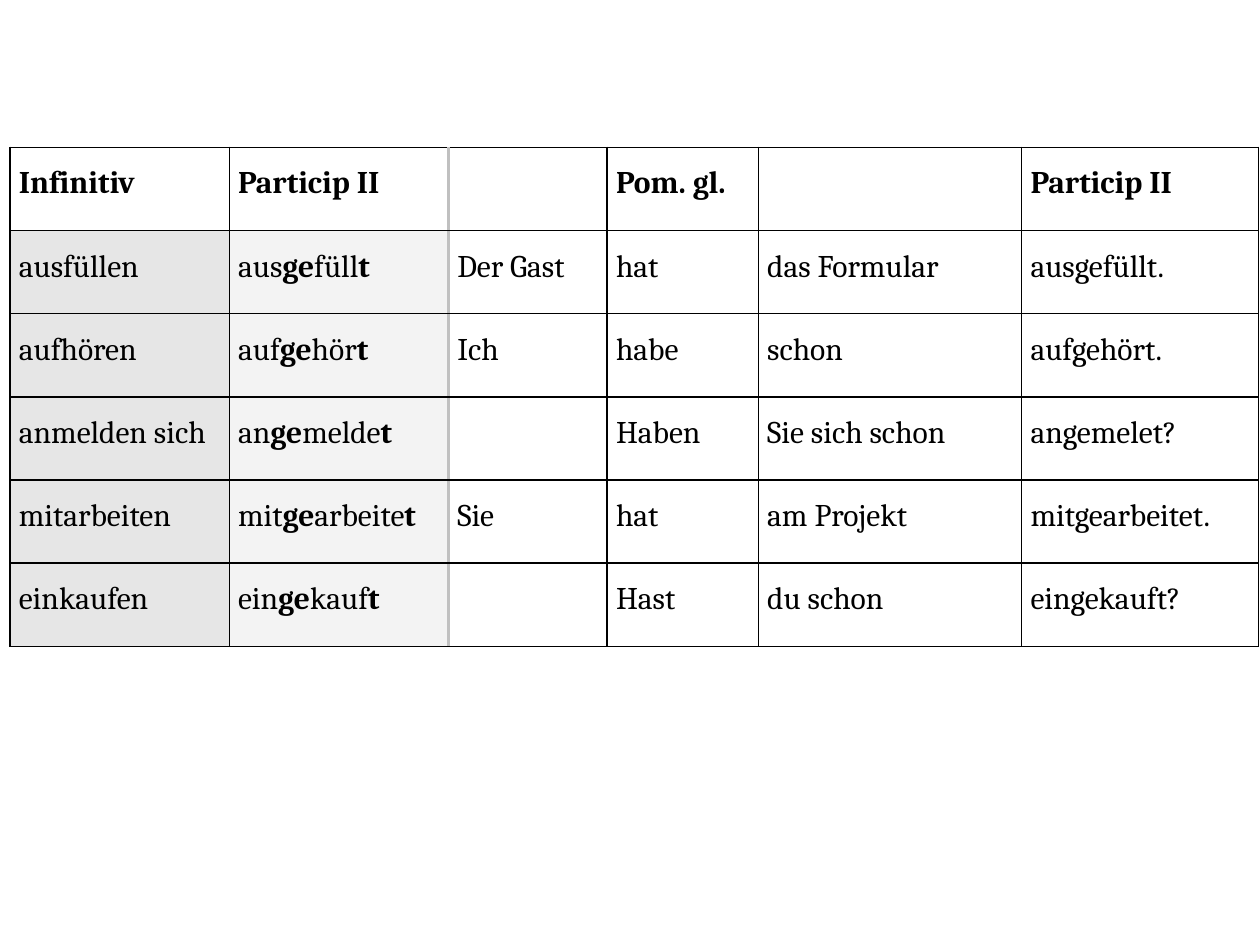
from dataclasses import dataclass

from lxml.etree import SubElement
from pptx import Presentation
from pptx.dml.color import RGBColor
from pptx.oxml.ns import qn
from pptx.util import Inches, Pt


@dataclass(frozen=True)
class Theme:
    """Colours, type and line widths of the slide."""
    font: str = "Cambria"
    size: float = 18
    text: str = "000000"
    infinitive_fill: str = "E6E6E6"
    participle_fill: str = "F3F3F3"
    grid: tuple = ("000000", 1)
    divider: tuple = ("C0C0C0", 2.5)


THEME = Theme()
COLUMN_WIDTHS = (1.74, 1.74, 1.26, 1.2, 2.09, 1.88)
ROW_HEIGHT = 0.66
COLUMN_FILLS = {0: THEME.infinitive_fill, 1: THEME.participle_fill}
HEADER = ("Infinitiv", "Particip II", "", "Pom. gl.", "", "Particip II")
VERBS = (
    ("ausfüllen", "aus*ge*füll*t*", "Der Gast", "hat", "das Formular", "ausgefüllt."),
    ("aufhören", "auf*ge*hör*t*", "Ich", "habe", "schon", "aufgehört."),
    ("anmelden sich", "an*ge*melde*t*", "", "Haben", "Sie sich schon", "angemelet?"),
    ("mitarbeiten", "mit*ge*arbeite*t*", "Sie", "hat", "am Projekt", "mitgearbeitet."),
    ("einkaufen", "ein*ge*kauf*t*", "", "Hast", "du schon", "eingekauft?"),
)


def write_text(paragraph, text, bold=False, size=THEME.size, color=THEME.text, spacing=1.5):
    """Write text into a paragraph, with bold for the parts between asterisks."""
    paragraph.line_spacing = spacing
    for index, part in enumerate(text.split("*")):
        if part:
            run = paragraph.add_run()
            run.text = part
            run.font.name = THEME.font
            run.font.size = Pt(size)
            run.font.bold = bold or index % 2 == 1
            run.font.color.rgb = RGBColor.from_string(color)


def set_borders(cell, **borders):
    """Draw the cell's sides, each given as a colour and a width."""
    properties = cell._tc.get_or_add_tcPr()
    for position, side in enumerate("LRTB"):
        color, width = borders.get(side, THEME.grid)
        line = SubElement(properties, qn(f"a:ln{side}"), w=str(Pt(width)))
        fill = SubElement(line, qn("a:solidFill"))
        SubElement(fill, qn("a:srgbClr"), val=color)
        properties.insert(position, line)


def format_cell(cell, text, fill=None, bold=False, **borders):
    """Set a cell's margins, fill, borders and text."""
    cell.margin_left = cell.margin_right = Inches(0.07)
    cell.margin_top = cell.margin_bottom = 0
    if fill:
        cell.fill.solid()
        cell.fill.fore_color.rgb = RGBColor.from_string(fill)
    else:
        cell.fill.background()
    set_borders(cell, **borders)
    write_text(cell.text_frame.paragraphs[0], text, bold=bold)


def add_verb_table(slide, left, top):
    """Add the table of separable verbs with their perfect forms."""
    rows = (HEADER, *VERBS)
    frame = slide.shapes.add_table(
        len(rows), len(HEADER), Inches(left), Inches(top),
        Inches(sum(COLUMN_WIDTHS)), Inches(ROW_HEIGHT * len(rows)))
    table = frame.table
    table.first_row = table.horz_banding = False
    for column, width in zip(table.columns, COLUMN_WIDTHS):
        column.width = Inches(width)
    divider_sides = {1: {"R": THEME.divider}, 2: {"L": THEME.divider}}
    for row_index, texts in enumerate(rows):
        table.rows[row_index].height = Inches(ROW_HEIGHT)
        is_header = row_index == 0
        for column_index, text in enumerate(texts):
            format_cell(
                table.cell(row_index, column_index), text, bold=is_header,
                fill=None if is_header else COLUMN_FILLS.get(column_index),
                **divider_sides.get(column_index, {}))


def main():
    """Build the slide and save it."""
    presentation = Presentation()
    presentation.slide_width = Inches(10)
    presentation.slide_height = Inches(7.5)
    slide = presentation.slides.add_slide(presentation.slide_layouts[6])
    add_verb_table(slide, left=0.08, top=1.17)
    presentation.save("out.pptx")


if __name__ == "__main__":
    main()
